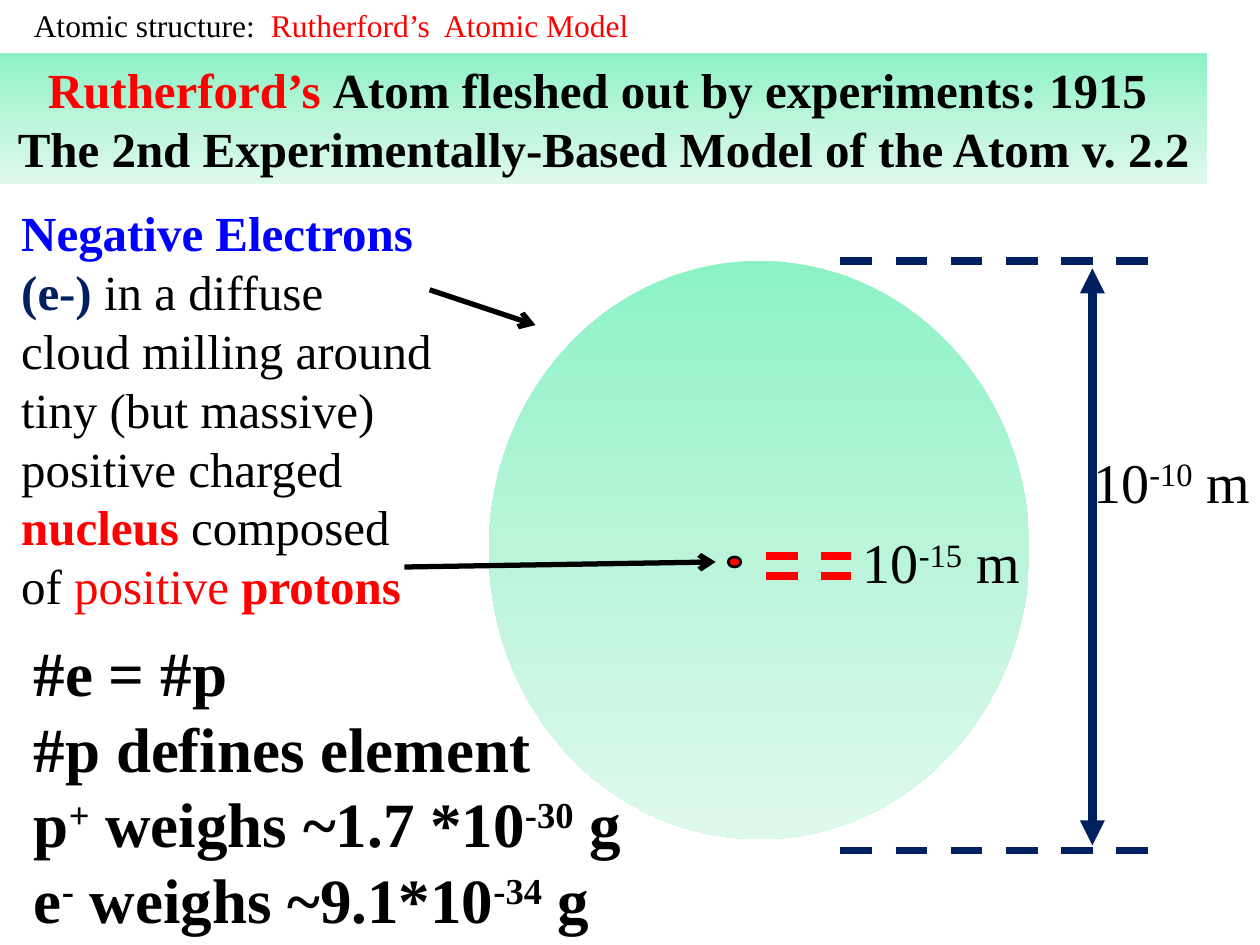
import copy

import pptx
import pptx.dml.color
import pptx.enum.dml
import pptx.enum.shapes
import pptx.enum.text
import pptx.oxml
import pptx.oxml.ns
import pptx.util

WIDTH, HEIGHT = pptx.util.Inches(10), pptx.util.Inches(7.5)
COLUMNS, ROWS = 100, 75
FONT = "Times New Roman"
BLACK, RED, BLUE, NAVY = "000000", "FF0000", "0000FF", "002060"
MINT = [(0, "8CF2C6"), (0.5, "BAF5DA"), (1, "DEF9EC")]
SHAPES = pptx.enum.shapes.MSO_SHAPE


def across(columns):
    return round(WIDTH * columns / COLUMNS)


def down(rows):
    return round(HEIGHT * rows / ROWS)


def place(left, top, width, height):
    return across(left), down(top), across(width), down(height)


def paint(color_format, code):
    color_format.rgb = pptx.dml.color.RGBColor.from_string(code)


def fill_gradient(shape, stops):
    """Fill the shape from top to bottom with any number of colour stops."""
    shape.fill.gradient()
    shape.fill.gradient_angle = 270
    first = shape.fill.gradient_stops[0]._gs
    while len(shape.fill.gradient_stops) < len(stops):
        first.addnext(copy.deepcopy(first))
    for stop, (position, code) in zip(shape.fill.gradient_stops, stops):
        stop.position = position
        paint(stop.color, code)


def add_plain_shape(page, kind, area):
    shape = page.shapes.add_shape(kind, *place(*area))
    shape.shadow.inherit = False
    shape.line.fill.background()
    return shape


def write(frame, paragraphs, size, bold=False, align=None):
    """Fill a frame; a span is (text, changes to colour, bold or raised)."""
    frame.word_wrap = True
    for number, spans in enumerate(paragraphs):
        para = frame.add_paragraph() if number else frame.paragraphs[0]
        para.alignment = align
        para.font.name, para.font.size = FONT, pptx.util.Pt(size)
        para.font.bold = bold
        for text, changes in spans:
            span = para.add_run()
            span.text = text
            paint(span.font.color, changes.get("color", BLACK))
            if "bold" in changes:
                span.font.bold = changes["bold"]
            if changes.get("raised"):
                span.font._element.set("baseline", "30000")


def add_text(page, area, paragraphs, size, bold=False):
    box = page.shapes.add_textbox(*place(*area))
    write(box.text_frame, paragraphs, size, bold)


def power(before, exponent, after):
    return [(before, {}), (exponent, {"raised": True}), (after, {})]


def add_line(page, start, end, code, weight, dashed=False, head=None, tail=None):
    line = page.shapes.add_connector(
        pptx.enum.shapes.MSO_CONNECTOR.STRAIGHT,
        across(start[0]), down(start[1]), across(end[0]), down(end[1]))
    paint(line.line.color, code)
    line.line.width = pptx.util.Pt(weight)
    if dashed:
        line.line.dash_style = pptx.enum.dml.MSO_LINE.DASH
    for tag, kind in (("a:headEnd", head), ("a:tailEnd", tail)):
        if kind:
            tip = pptx.oxml.parse_xml(
                f"<{tag} {pptx.oxml.ns.nsdecls('a')} type='{kind}'/>")
            line.line._get_or_add_ln().append(tip)
    line._element.spPr.append(pptx.oxml.parse_xml(
        f"<a:effectLst {pptx.oxml.ns.nsdecls('a')}/>"))


def add_atom(page):
    cloud = add_plain_shape(page, SHAPES.OVAL, (38.8, 20.7, 42.9, 45.9))
    fill_gradient(cloud, MINT)
    nucleus = add_plain_shape(page, SHAPES.OVAL, (57.8, 44.2, 1, 0.8))
    nucleus.fill.solid()
    paint(nucleus.fill.fore_color, RED)
    paint(nucleus.line.color, BLACK)
    nucleus.line.width = pptx.util.Pt(1.5)


def add_headings(page):
    banner = add_plain_shape(page, SHAPES.RECTANGLE, (0, 4.2, 95.8, 10.4))
    fill_gradient(banner, MINT)
    write(banner.text_frame, [
        [("Rutherford’s ", {"color": RED}),
         ("Atom fleshed out by experiments: 1915 ", {})],
        [("The 2nd Experimentally-Based Model of the Atom v. 2.2", {})],
    ], 28, True, pptx.enum.text.PP_ALIGN.CENTER)
    add_text(page, (1.7, 0, 81.7, 4), [
        [("Atomic structure:  ", {}),
         ("Rutherford’s  Atomic Model", {"color": RED})]], 18)


def add_explanations(page):
    add_text(page, (0.7, 15.6, 35.1, 41.1), [[
        ("Negative Electrons ", {"color": BLUE, "bold": True}),
        ("(e-) ", {"color": NAVY, "bold": True}),
        ("in a diffuse cloud milling around tiny (but massive) "
         "positive charged ", {}),
        ("nucleus ", {"color": RED, "bold": True}),
        ("composed of ", {}),
        ("positive ", {"color": RED}),
        ("protons", {"color": RED, "bold": True}),
    ]], 28)
    add_text(page, (1.7, 49.8, 53.4, 25.2), [
        [("#e = #p", {})],
        [("#p defines element", {})],
        power("p", "+", " weighs ~1.7 *10") + power("", "-30", " g")[1:],
        power("e", "-", " weighs ~9.1*10") + power("", "-34", " g")[1:],
    ], 36, True)


def add_measures(page):
    for start, end in (((34.1, 23), (42.5, 25.8)), ((32.1, 45), (56.8, 44.6))):
        add_line(page, start, end, BLACK, 3, tail="arrow")
    for left, right, rows, code in ((66.7, 91.7, (20.7, 67.5), NAVY),
                                    (60.8, 67.5, (44.1, 45.7), RED)):
        for row in rows:
            add_line(page, (left, row), (right, row), code, 4.5, dashed=True)
    add_line(page, (86.7, 21.3), (86.7, 67.1), NAVY, 4.75,
             head="triangle", tail="triangle")
    for left, top, exponent in ((85.8, 35, "-10"), (67.5, 41.4, "-15")):
        add_text(page, (left, top, 16.7, 6.4), [power("10", exponent, " m")], 32)


def main():
    deck = pptx.Presentation()
    deck.slide_width, deck.slide_height = WIDTH, HEIGHT
    page = deck.slides.add_slide(deck.slide_layouts[6])
    add_atom(page)
    add_headings(page)
    add_explanations(page)
    add_measures(page)
    deck.save("out.pptx")


if __name__ == "__main__":
    main()
